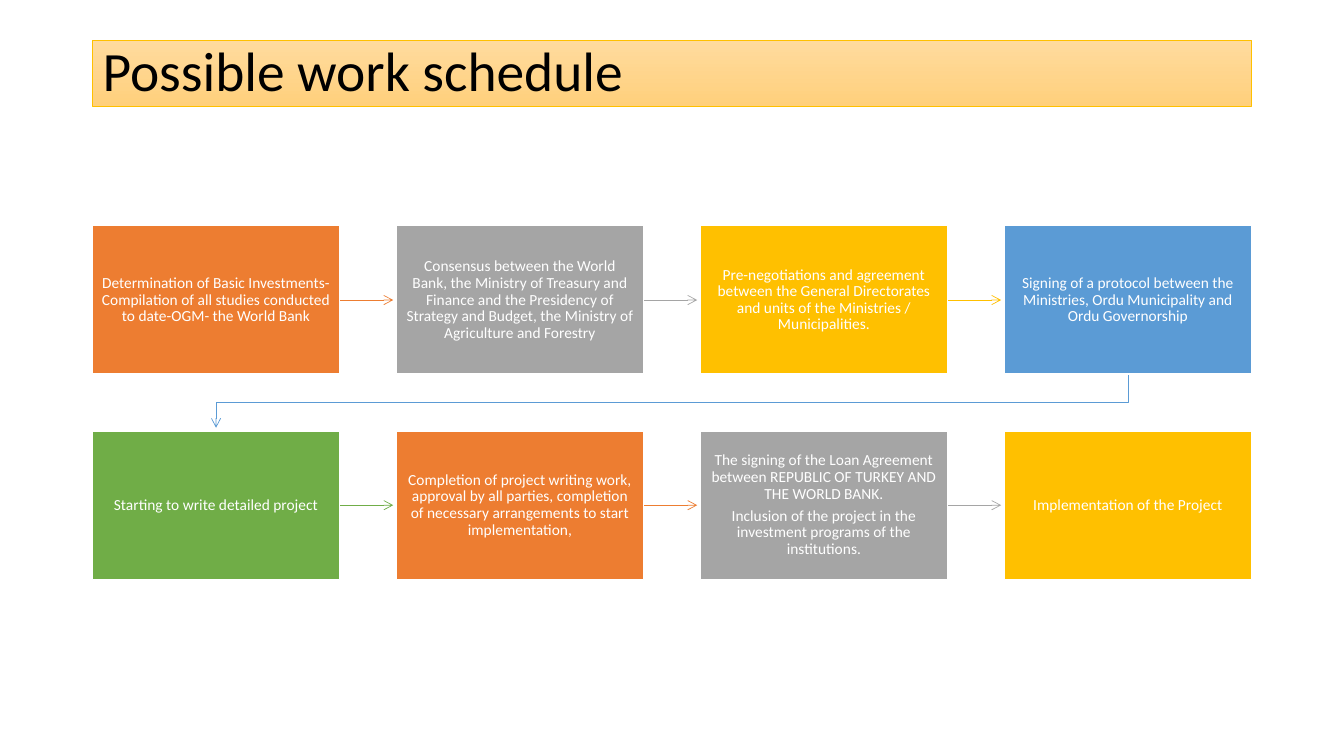
import pptx
import pptx.dml.color
import pptx.enum.dml
import pptx.enum.shapes
import pptx.enum.text
import pptx.util
from lxml import etree
from pptx.util import Cm, Pt

FONT = "Calibri"
COLOURS = {
    "orange": "ED7D31", "grey": "A5A5A5", "gold": "FFC000", "blue": "5B9BD5",
    "green": "70AD47", "white": "FFFFFF", "black": "000000",
    "title_top": "FFDB9E", "title_bottom": "FFD07C",
}
STEPS = [
    ("orange", "Determination of Basic Investments-Compilation of all studies "
               "conducted to date-OGM- the World Bank"),
    ("grey", "Consensus between the World Bank, the Ministry of Treasury and Finance "
             "and the Presidency of Strategy and Budget, the Ministry of Agriculture "
             "and Forestry"),
    ("gold", "Pre-negotiations and agreement between the General Directorates and "
             "units of the Ministries / Municipalities."),
    ("blue", "Signing of a protocol between the Ministries, Ordu Municipality and "
             "Ordu Governorship"),
    ("green", "Starting to write detailed project"),
    ("orange", "Completion of project writing work, approval by all parties, "
               "completion of necessary arrangements to start implementation,"),
    ("grey", "The signing of the Loan Agreement between REPUBLIC OF TURKEY AND THE "
             "WORLD BANK.\nInclusion of the project in the investment programs of "
             "the institutions."),
    ("gold", "Implementation of the Project"),
]
COLUMNS = 4
STEP_WIDTH, STEP_HEIGHT = Cm(6.23), Cm(3.74)
ARROW_GAP = Cm(0.08)


def colour(name):
    return pptx.dml.color.RGBColor.from_string(COLOURS[name])


def style_line(line, name, width):
    line.color.rgb = colour(name)
    line.width = Pt(width)


def add_arrowhead(line):
    properties = line.color._xFill.getparent()
    etree.SubElement(properties, pptx.oxml.ns.qn("a:tailEnd"), type="arrow")


def add_title(page, left, top, width, height):
    title = page.shapes.title
    title.left, title.top, title.width, title.height = left, top, width, height
    title.fill.gradient()
    title.fill.gradient_angle = 270
    for stop, name in zip(title.fill.gradient_stops, ("title_top", "title_bottom")):
        stop.color.rgb = colour(name)
    style_line(title.line, "gold", 0.5)
    frame = title.text_frame
    frame.text = "Possible work schedule"
    frame.auto_size = pptx.enum.text.MSO_AUTO_SIZE.NONE
    frame.vertical_anchor = pptx.enum.text.MSO_ANCHOR.MIDDLE
    para = frame.paragraphs[0]
    para.alignment = pptx.enum.text.PP_ALIGN.LEFT
    para.line_spacing = 0.9
    para.font.name, para.font.size = FONT, Pt(39.6)
    para.font.color.rgb = colour("black")


def add_step(page, left, top, name, text):
    box = page.shapes.add_shape(pptx.enum.shapes.MSO_SHAPE.RECTANGLE,
                                left, top, STEP_WIDTH, STEP_HEIGHT)
    box.shadow.inherit = False
    box.fill.solid()
    box.fill.fore_color.rgb = colour(name)
    style_line(box.line, "white", 1)
    frame = box.text_frame
    frame.word_wrap = True
    frame.vertical_anchor = pptx.enum.text.MSO_ANCHOR.MIDDLE
    frame.margin_left = frame.margin_right = Cm(0.22)
    frame.margin_top = frame.margin_bottom = Cm(0.22)
    frame.text = text
    for para in frame.paragraphs:
        para.alignment = pptx.enum.text.PP_ALIGN.CENTER
        para.line_spacing = 0.9
        para.space_after = Pt(3.85)
        para.font.name, para.font.size = FONT, Pt(11)
        para.font.color.rgb = colour("white")


def add_straight_arrow(page, start, end, name):
    arrow = page.shapes.add_connector(pptx.enum.shapes.MSO_CONNECTOR.STRAIGHT,
                                      *start, *end)
    style_line(arrow.line, name, 0.5)
    add_arrowhead(arrow.line)
    etree.SubElement(arrow._element.spPr, pptx.oxml.ns.qn("a:effectLst"))


def add_return_arrow(page, start, end, name):
    """Lead from the end of one row down and back to the start of the next."""
    middle = (start[1] + end[1] + ARROW_GAP) // 2
    builder = page.shapes.build_freeform(*start)
    builder.add_line_segments([(start[0], middle), (end[0], middle), end], close=False)
    arrow = builder.convert_to_shape()
    arrow.shadow.inherit = False
    arrow.fill.background()
    style_line(arrow.line, name, 0.5)
    add_arrowhead(arrow.line)


def add_schedule(page, left, top, width, height):
    """Place the steps in rows, each with an arrow to the next step."""
    rows = len(STEPS) // COLUMNS
    across = (width - STEP_WIDTH) // (COLUMNS - 1)
    down = (height - STEP_HEIGHT) // (rows - 1)
    corners = [(left + index % COLUMNS * across, top + index // COLUMNS * down)
               for index in range(len(STEPS))]
    for index, ((x, y), (name, text)) in enumerate(zip(corners, STEPS)):
        if index + 1 < len(STEPS):
            next_x, next_y = corners[index + 1]
            if next_y == y:
                middle = y + STEP_HEIGHT // 2
                add_straight_arrow(page, (x + STEP_WIDTH, middle),
                                   (next_x - ARROW_GAP, middle), name)
            else:
                add_return_arrow(page, (x + STEP_WIDTH // 2, y + STEP_HEIGHT),
                                 (next_x + STEP_WIDTH // 2, next_y - ARROW_GAP), name)
        add_step(page, x, y, name, text)


def main():
    deck = pptx.Presentation()
    deck.slide_width, deck.slide_height = Cm(33.87), Cm(19.05)
    page = deck.slides.add_slide(deck.slide_layouts[5])
    add_title(page, Cm(2.33), Cm(1.02), Cm(29.21), Cm(1.65))
    add_schedule(page, Cm(2.33), Cm(5.69), Cm(29.21), Cm(8.91))
    deck.save("out.pptx")


if __name__ == "__main__":
    main()
